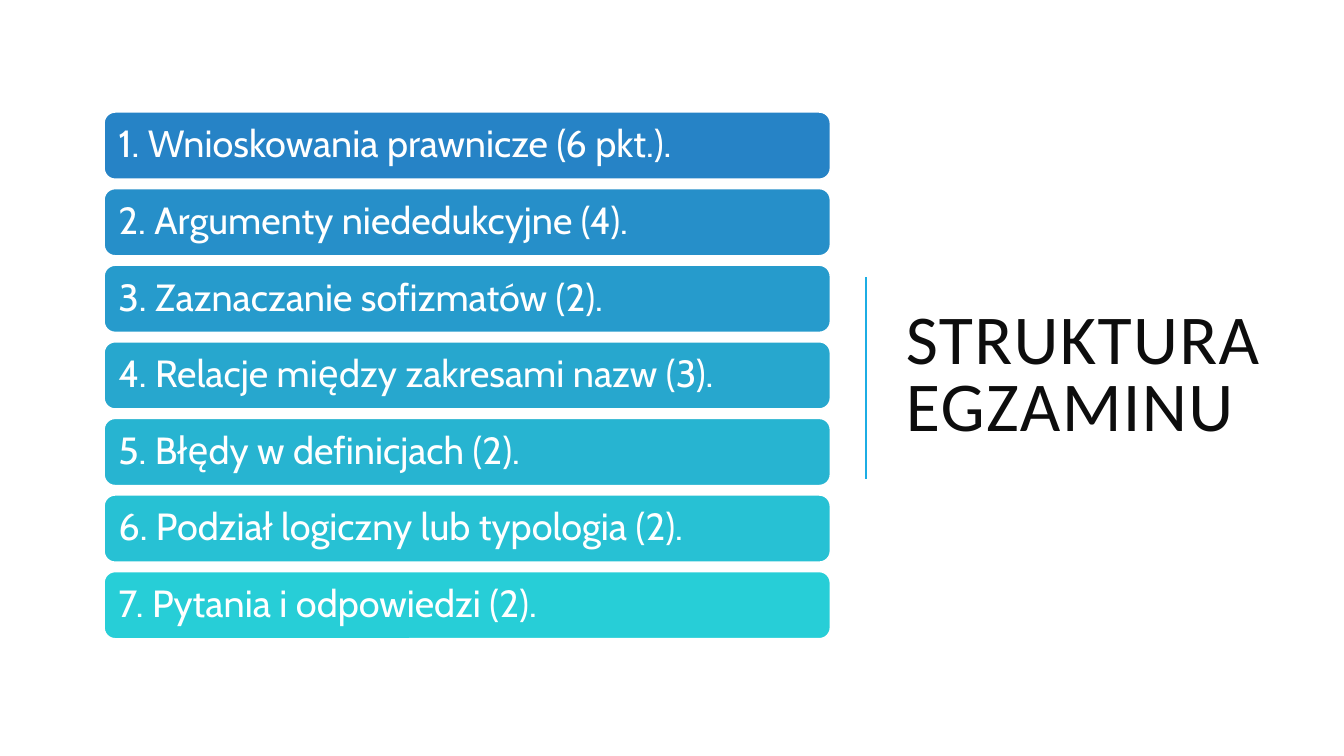
"""Builds the exam structure slide: seven graded bars beside the title."""
import pptx
import pptx.dml.color
import pptx.enum.shapes
import pptx.enum.text
import pptx.oxml
import pptx.oxml.ns
import pptx.util

Cm = pptx.util.Cm

COLORS = {
    "white": "FFFFFF",
    "title": "0D0D0D",
    "divider": "1CADE4",
    "inference": "2683C6",
    "arguments": "268FC9",
    "sophisms": "269BCC",
    "relations": "27A7CE",
    "definitions": "27B4D1",
    "division": "27C1D4",
    "questions": "27CED7",
}

TOPICS = [
    ("inference", "1. Wnioskowania prawnicze (6 pkt.)."),
    ("arguments", "2. Argumenty niededukcyjne (4)."),
    ("sophisms", "3. Zaznaczanie sofizmatów (2)."),
    ("relations", "4. Relacje między zakresami nazw (3)."),
    ("definitions", "5. Błędy w definicjach (2)."),
    ("division", "6. Podział logiczny lub typologia (2)."),
    ("questions", "7. Pytania i odpowiedzi (2)."),
]


def rgb(name):
    return pptx.dml.color.RGBColor.from_string(COLORS[name])


def write_text(shape, text, *, font, size, color, line_spacing, inset, tracking=0):
    frame = shape.text_frame
    frame.word_wrap = True
    frame.auto_size = pptx.enum.text.MSO_AUTO_SIZE.NONE
    frame.vertical_anchor = pptx.enum.text.MSO_ANCHOR.MIDDLE
    frame.margin_left = frame.margin_right = Cm(inset)
    frame.margin_top = frame.margin_bottom = Cm(inset)
    paragraph = frame.paragraphs[0]
    paragraph.alignment = pptx.enum.text.PP_ALIGN.LEFT
    paragraph.line_spacing = line_spacing
    run = paragraph.add_run()
    run.text = text
    run.font.name = font
    run.font.size = pptx.util.Pt(size)
    run.font.color.rgb = rgb(color)
    if tracking:
        run.font._element.set("spc", str(tracking * 100))


def place_title(slide, text):
    title = slide.shapes.title
    title.left, title.top = Cm(22.58), Cm(1.78)
    title.width, title.height = Cm(9.65), Cm(15.47)
    write_text(title, text, font="Calibri", size=50, color="title",
               line_spacing=0.8, inset=0.25, tracking=1)


def add_divider(slide, x, top, bottom):
    divider = slide.shapes.add_connector(
        pptx.enum.shapes.MSO_CONNECTOR.STRAIGHT, Cm(x), Cm(bottom), Cm(x), Cm(top))
    divider.line.color.rgb = rgb("divider")
    divider.line.width = pptx.util.Pt(1.5)
    divider._element.spPr.append(
        pptx.oxml.parse_xml(f"<a:effectLst {pptx.oxml.ns.nsdecls('a')}/>"))


def add_topic_bar(slide, top, text, color):
    bar = slide.shapes.add_shape(
        pptx.enum.shapes.MSO_SHAPE.ROUNDED_RECTANGLE,
        Cm(2.62), Cm(top), Cm(18.31), Cm(1.7))
    bar.shadow.inherit = False
    bar.fill.solid()
    bar.fill.fore_color.rgb = rgb(color)
    bar.line.color.rgb = rgb("white")
    bar.line.width = pptx.util.Pt(1.25)
    write_text(bar, text, font="Cabin", size=27, color="white",
               line_spacing=0.9, inset=0.28)


def main():
    deck = pptx.Presentation()
    deck.slide_width, deck.slide_height = Cm(33.87), Cm(19.05)
    slide = deck.slides.add_slide(deck.slide_layouts.get_by_name("Title Only"))
    place_title(slide, "STRUKTURA EGZAMINU")
    add_divider(slide, 21.82, 6.99, 12.07)
    first_top, pitch = 2.82, 1.93
    for row, (color, text) in enumerate(TOPICS):
        add_topic_bar(slide, first_top + row * pitch, text, color)
    deck.save("out.pptx")


if __name__ == "__main__":
    main()
